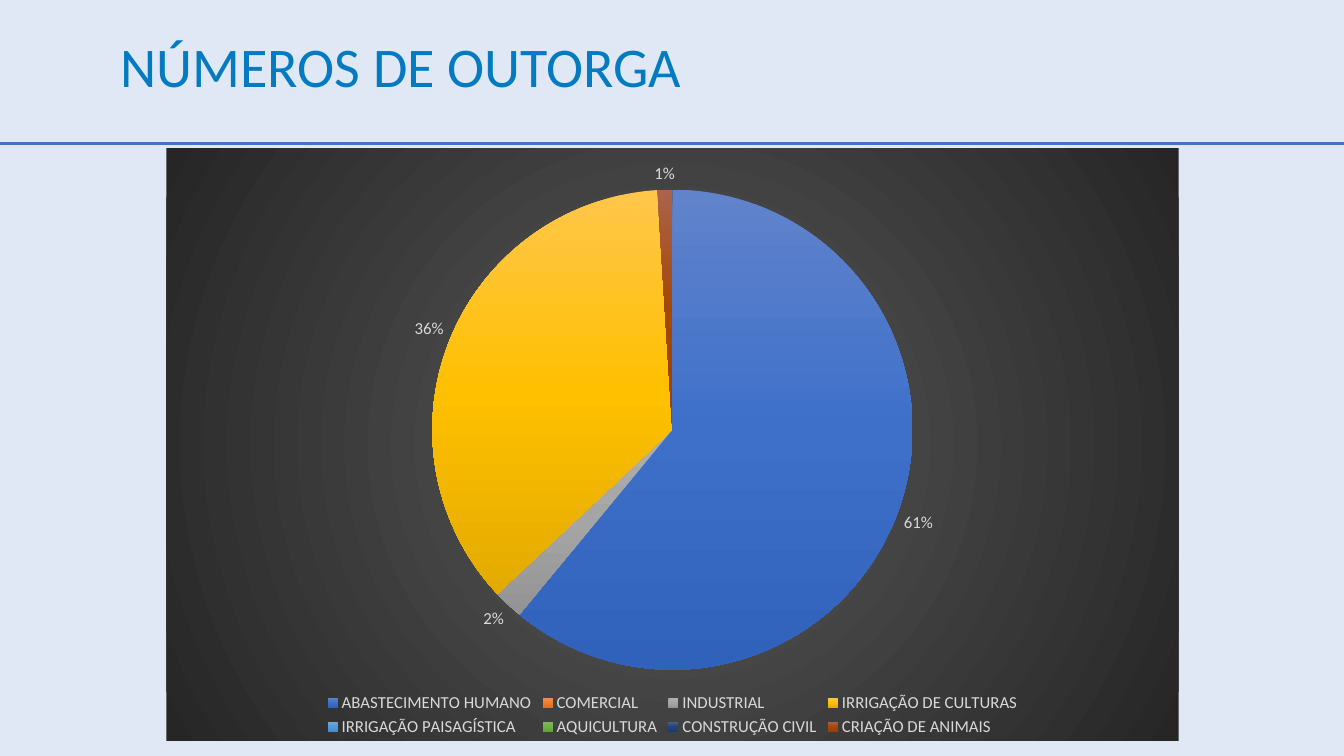
from lxml.etree import SubElement
from pptx import Presentation
from pptx.chart.data import CategoryChartData
from pptx.dml.color import RGBColor
from pptx.enum.chart import XL_CHART_TYPE, XL_LABEL_POSITION, XL_LEGEND_POSITION
from pptx.enum.shapes import MSO_CONNECTOR, MSO_SHAPE
from pptx.oxml import parse_xml
from pptx.oxml.ns import nsdecls, qn
from pptx.util import Inches, Pt

WIDTH, HEIGHT = Inches(13.33), Inches(7.5)
FONT = "Calibri"
USES = [
    ("ABASTECIMENTO HUMANO", 61, ("6183CB", "3E70CA", "3062BB")),
    ("COMERCIAL", 0, ("F18C57", "F67B28", "E56C19")),
    ("INDUSTRIAL", 2, ("AFAFAF", "A5A5A5", "939393")),
    ("IRRIGAÇÃO DE CULTURAS", 36, ("FFC64B", "FFC000", "E3AB00")),
    ("IRRIGAÇÃO PAISAGÍSTICA", 0, ("71A6DB", "559BDB", "448ACA")),
    ("AQUICULTURA", 0, ("81B861", "6FB242", "62A336")),
    ("CONSTRUÇÃO CIVIL", 0, ("516089", "22427D", "1A3A72")),
    ("CRIAÇÃO DE ANIMAIS", 1, ("AB634B", "A54707", "983E00")),
]


def rgb(color):
    """Turn a hex string into a colour."""
    return RGBColor.from_string(color)


def box(x, y, w, h):
    """Turn shares of the slide's size into lengths."""
    return [round(v * n) for v, n in zip((x, y, w, h), (WIDTH, HEIGHT) * 2)]


def style(font, size, color):
    """Set the face, size and colour of a font."""
    font.name, font.size = FONT, Pt(size)
    font.color.rgb = rgb(color)


def gradient(colors, direction):
    """Build a gradient fill with evenly spaced stops."""
    stops = "".join(
        f'<a:gs pos="{100000 * i // (len(colors) - 1)}"><a:srgbClr val="{c}"/></a:gs>'
        for i, c in enumerate(colors))
    return f"<a:gradFill {nsdecls('a')}><a:gsLst>{stops}</a:gsLst>{direction}</a:gradFill>"


def add_tint(s, color, opacity):
    """Cover the slide with a translucent colour."""
    sp = s.shapes.add_shape(MSO_SHAPE.RECTANGLE, *box(-0.01, 0, 1.01, 1))
    sp.shadow.inherit = False
    sp.line.fill.background()
    sp.fill.solid()
    sp.fill.fore_color.rgb = rgb(color)
    clr = sp.fill._xPr.find(".//" + qn("a:srgbClr"))
    SubElement(clr, qn("a:alpha"), val=str(opacity * 1000))


def add_rule(s, y, color):
    """Draw a line across the slide."""
    x, y, w, _ = box(0, y, 1, 0)
    line = s.shapes.add_connector(MSO_CONNECTOR.STRAIGHT, x, y, x + w, y)
    line.line.color.rgb = rgb(color)
    line.line.width = Pt(2)
    SubElement(line._element.spPr, qn("a:effectLst"))


def add_title(s, text, area):
    """Add the heading."""
    tf = s.shapes.add_textbox(*area).text_frame
    tf.word_wrap = True
    p = tf.paragraphs[0]
    p.text = text
    p.line_spacing = 0.9
    style(p.runs[0].font, 40, "047BC0")


def place_plot(chart, **shares):
    """Fix the pie's place within the chart."""
    area = chart.element.find(".//" + qn("c:plotArea"))
    for old in area.findall(qn("c:layout")):
        area.remove(old)
    values = "".join(f'<c:{k} val="{v}"/>' for k, v in shares.items())
    area.insert(0, parse_xml(
        f'<c:layout {nsdecls("c")}><c:manualLayout><c:layoutTarget val="inner"/>'
        f'<c:xMode val="edge"/><c:yMode val="edge"/>{values}</c:manualLayout></c:layout>'))


def add_pie(s, uses, area):
    """Add the pie of uses on a dark backdrop."""
    data = CategoryChartData()
    data.categories = [name for name, _, _ in uses]
    data.add_series("Series 1", [value for _, value, _ in uses])
    chart = s.shapes.add_chart(XL_CHART_TYPE.PIE, *area, data).chart
    chart.has_title = False
    style(chart.font, 10, "000000")
    chart.has_legend = True
    chart.legend.position = XL_LEGEND_POSITION.BOTTOM
    chart.legend.include_in_layout = False
    style(chart.legend.font, 12, "D9D9D9")
    place_plot(chart, x=0.26, y=0.07, w=0.48, h=0.81)

    plot = chart.plots[0]
    plot.vary_by_categories = True
    plot.has_data_labels = True
    labels = plot.data_labels
    labels.show_value, labels.show_percentage = False, True
    labels.number_format, labels.number_format_is_linked = "0%", False
    labels.position = XL_LABEL_POSITION.OUTSIDE_END
    style(labels.font, 12, "D9D9D9")

    for i, (_, _, colors) in enumerate(uses):
        fill = plot.series[0].points[i].format.fill
        fill.gradient()
        old = fill._xPr.find(qn("a:gradFill"))
        fill._xPr.replace(old, parse_xml(gradient(colors, '<a:lin ang="5400000" scaled="0"/>')))

    centre = '<a:path path="circle"><a:fillToRect l="50000" t="50000" r="50000" b="50000"/></a:path>'
    backdrop = gradient(("595959", "262626"), centre)
    chart.element.find(qn("c:txPr")).addprevious(parse_xml(
        f'<c:spPr {nsdecls("c", "a")}>{backdrop}<a:ln><a:noFill/></a:ln></c:spPr>'))


def main():
    """Build the slide and save it."""
    prs = Presentation()
    prs.slide_width, prs.slide_height = WIDTH, HEIGHT
    s = prs.slides.add_slide(prs.slide_layouts[6])
    add_tint(s, "B4C7E7", 40)
    add_rule(s, 0.19, "4472C4")
    add_pie(s, USES, [Inches(v) for v in (1.65, 1.47, 10.04, 5.88)])
    add_title(s, "NÚMEROS DE OUTORGA", [Inches(v) for v in (1.1, 0.34, 11.89, 0.71)])
    prs.save("out.pptx")


if __name__ == "__main__":
    main()
